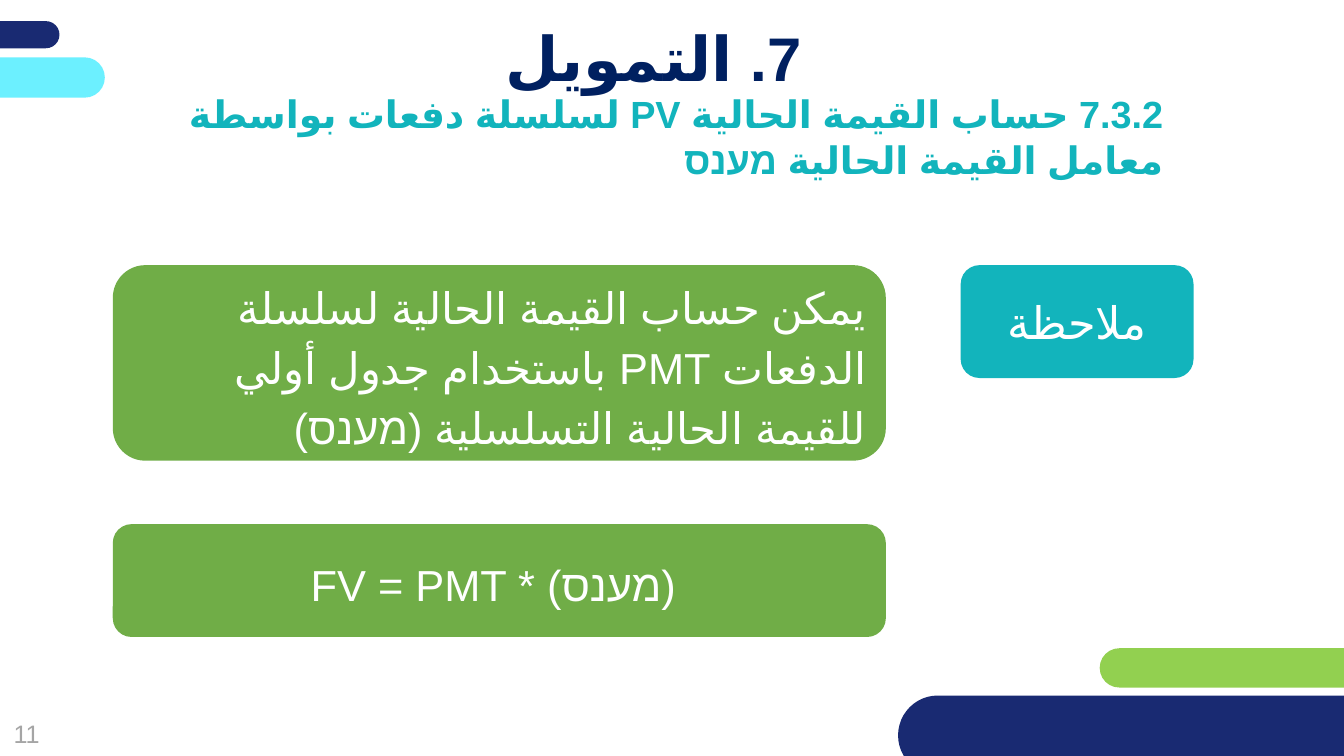
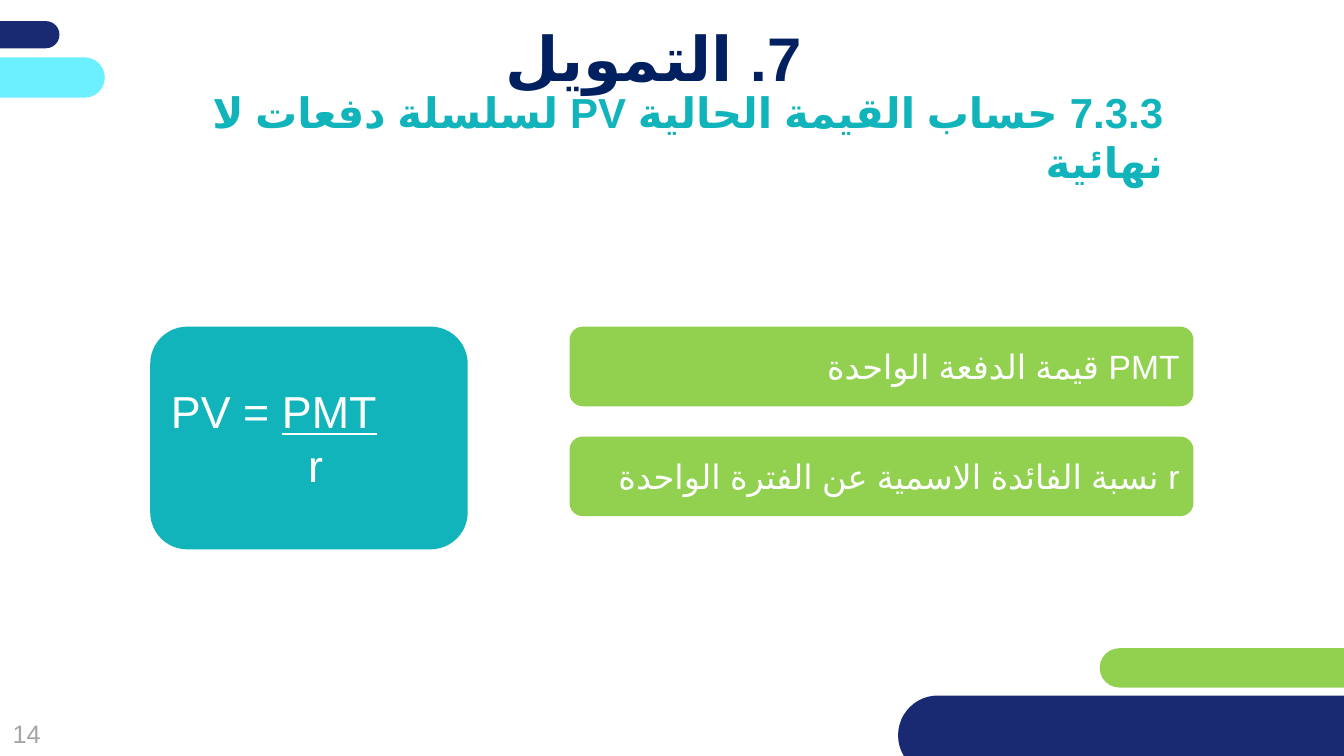
"""Build two right-to-left finance slides on present value of payment series."""
from dataclasses import dataclass

from lxml import etree
from pptx import Presentation
from pptx import util as u
from pptx.dml.color import RGBColor
from pptx.enum import lang, shapes, text
from pptx.oxml.ns import qn

LEFT, CENTER, RIGHT = text.PP_ALIGN.LEFT, text.PP_ALIGN.CENTER, text.PP_ALIGN.RIGHT


@dataclass(frozen=True)
class Theme:
    """Colours, type sizes and shared margins in points."""
    font: str = "Arial"
    navy: str = "192A72"
    title: str = "002060"
    teal: str = "12B4BC"
    cyan: str = "6CF0FF"
    lime: str = "92D050"
    green: str = "70AD47"
    gray: str = "A5A5A5"
    white: str = "FFFFFF"
    title_size: int = 44
    label_size: int = 32
    note_size: int = 31
    term_size: int = 24
    number_size: int = 18
    left: float = 80.6
    right: float = 852.5


THEME = Theme()
CONTENT_WIDTH = THEME.right - THEME.left
BANDS = (
    (-191.5, 15.1, 234, 19.4, THEME.navy),
    (785.5, 463, 375.1, 28.1, THEME.lime),
    (-159.1, 41, 234, 28.8, THEME.cyan),
    (641.5, 496.8, 407.5, 56.9, THEME.navy),
)


def add_panel(page, kind, left, top, width, height, color):
    """Add a flat filled shape without outline or shadow."""
    panel = page.shapes.add_shape(kind, u.Pt(left), u.Pt(top), u.Pt(width), u.Pt(height))
    panel.shadow.inherit = False
    panel.fill.solid()
    panel.fill.fore_color.rgb = RGBColor.from_string(color)
    panel.line.fill.background()
    return panel


def add_card(page, left, top, width, height, color):
    """Add a rounded content card."""
    kind = shapes.MSO_SHAPE.FLOWCHART_ALTERNATE_PROCESS
    return add_panel(page, kind, left, top, width, height, color)


def add_label(page, left, top, width, height):
    """Add an empty text box."""
    return page.shapes.add_textbox(u.Pt(left), u.Pt(top), u.Pt(width), u.Pt(height))


def add_span(para, words, size, color, bold=False, underline=False):
    """Add one run in the theme font for Latin and complex scripts."""
    span = para.add_run()
    span.text = words
    font = span.font
    font.size, font.bold, font.underline = u.Pt(size), bold, underline
    font.color.rgb = RGBColor.from_string(color)
    font.name = THEME.font
    font.language_id = lang.MSO_LANGUAGE_ID.HEBREW
    properties = span._r.get_or_add_rPr()
    etree.SubElement(properties, qn("a:cs")).set("typeface", THEME.font)


def start_text(box):
    """Prepare a wrapping, vertically centred frame and return its paragraph."""
    frame = box.text_frame
    frame.word_wrap = True
    frame.vertical_anchor = text.MSO_ANCHOR.MIDDLE
    return frame.paragraphs[0]


def write(box, words, size, color=THEME.white, align=CENTER, rtl=True, bold=False, spacing=None):
    """Fill a box with one paragraph."""
    para = start_text(box)
    para.alignment = align
    if spacing:
        para.line_spacing = spacing
    if rtl:
        para._p.get_or_add_pPr().set("rtl", "1")
    add_span(para, words, size, color, bold)


def write_fraction(box, lead, numerator, denominator, indent):
    """Write a fraction as an underlined numerator above its denominator."""
    top = start_text(box)
    bottom = box.text_frame.add_paragraph()
    top.alignment = bottom.alignment = LEFT
    add_span(top, lead, THEME.label_size, THEME.white)
    add_span(top, numerator, THEME.label_size, THEME.white, underline=True)
    bottom._p.get_or_add_pPr().set("marL", str(u.Pt(indent)))
    add_span(bottom, denominator, THEME.label_size, THEME.white)


def add_page(deck, number, subtitle, subtitle_size):
    """Add a page with bands, number, chapter title and subtitle."""
    page = deck.slides.add_slide(deck.slide_layouts[6])
    for *place, color in BANDS:
        band = add_panel(page, shapes.MSO_SHAPE.ROUNDED_RECTANGLE, *place, color)
        band.adjustments[0] = 0.5
    write(add_label(page, 0, 507.6, 38, 32.4), number, THEME.number_size, THEME.gray, rtl=False)
    title = add_label(page, THEME.left, 12.2, CONTENT_WIDTH, 56.9)
    write(title, "7. التمويل", THEME.title_size, THEME.title, bold=True)
    heading = add_label(page, THEME.left, 80.6, CONTENT_WIDTH, 33.8)
    heading.text_frame.margin_right = u.Pt(21.6)
    write(heading, subtitle, subtitle_size, THEME.teal, RIGHT, bold=True)
    return page


def add_factor_page(deck):
    """Add the page on the present value factor."""
    page = add_page(
        deck, "11", "7.3.2 حساب القيمة الحالية PV لسلسلة دفعات بواسطة معامل القيمة الحالية מענס", 27)
    label_width, note_width, top, height = 166.3, 552.2, 189.4, 80.6
    label = add_card(page, THEME.right - label_width, top, label_width, height, THEME.teal)
    write(label, "ملاحظة", THEME.label_size)
    note = add_card(page, THEME.left, top, note_width, 139.7, THEME.green)
    write(note, "يمكن حساب القيمة الحالية لسلسلة الدفعات PMT باستخدام جدول أولي "
          "للقيمة الحالية التسلسلية (מענס)", THEME.note_size, align=RIGHT, spacing=1.15)
    formula = add_card(page, THEME.left, 374.4, note_width, height, THEME.green)
    write(formula, "FV = PMT * (מענס) ", THEME.note_size, rtl=False, spacing=1.15)


def add_perpetuity_page(deck):
    """Add the page on endless payment series."""
    page = add_page(deck, "14", "7.3.3 حساب القيمة الحالية PV لسلسلة دفعات لا نهائية", 30)
    top, term_left, pitch = 233.3, 406.8, 78.5
    formula = add_card(page, 107.3, top, 226.8, 159.1, THEME.teal)
    write_fraction(formula, "PV = ", "PMT", "r", 98)
    terms = ("PMT قيمة الدفعة الواحدة", "r نسبة الفائدة الاسمية عن الفترة الواحدة")
    for index, term in enumerate(terms):
        card = add_card(
            page, term_left, top + index * pitch, THEME.right - term_left, 56.9, THEME.lime)
        write(card, term, THEME.term_size, align=RIGHT)


def main():
    """Build and save the deck."""
    deck = Presentation()
    deck.slide_width, deck.slide_height = u.Pt(960), u.Pt(540)
    add_factor_page(deck)
    add_perpetuity_page(deck)
    deck.save("out.pptx")


if __name__ == "__main__":
    main()
